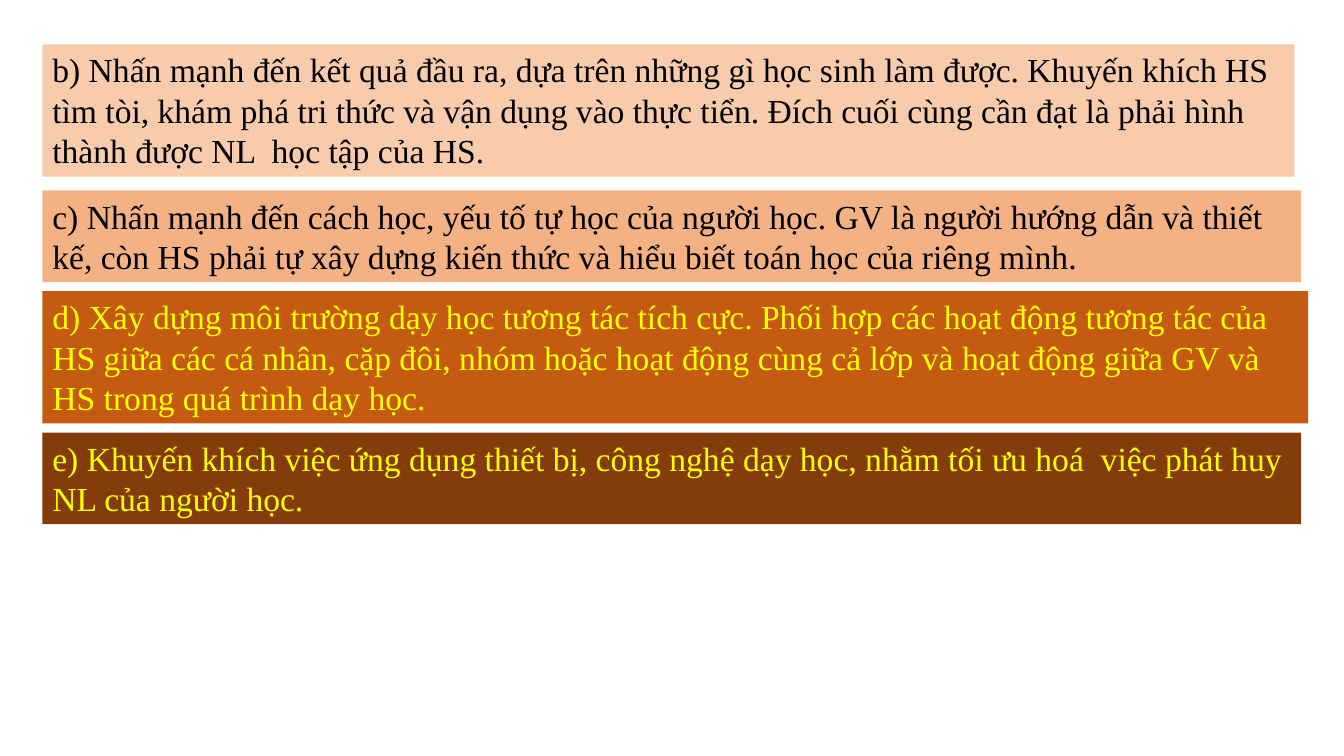
import pptx
import pptx.dml.color
import pptx.enum.text
import pptx.util

Cm = pptx.util.Cm
RGB = pptx.dml.color.RGBColor

PEACH = RGB(0xF8, 0xCB, 0xAD)
APRICOT = RGB(0xF4, 0xB1, 0x83)
RUST = RGB(0xC5, 0x5A, 0x11)
BROWN = RGB(0x84, 0x3C, 0x0B)
BLACK = RGB(0, 0, 0)
YELLOW = RGB(0xFF, 0xFF, 0)

LEFT = Cm(1.07)
TWO_LINES, THREE_LINES = Cm(2.31), Cm(3.33)

# top, width, height, fill, ink, text
POINTS = [
    (Cm(1.12), Cm(31.55), THREE_LINES, PEACH, BLACK,
     "b) Nhấn mạnh đến kết quả đầu ra, dựa trên những gì học sinh làm được. "
     "Khuyến khích HS tìm tòi, khám phá tri thức và vận dụng vào thực tiển. "
     "Đích cuối cùng cần đạt là phải hình thành được NL  học tập của HS."),
    (Cm(4.8), Cm(31.72), TWO_LINES, APRICOT, BLACK,
     "c) Nhấn mạnh đến cách học, yếu tố tự học của người học. "
     "GV là người hướng dẫn và thiết kế, còn HS phải tự xây dựng kiến thức "
     "và hiểu biết toán học của riêng mình."),
    (Cm(7.34), Cm(31.9), THREE_LINES, RUST, YELLOW,
     "d) Xây dựng môi trường dạy học tương tác tích cực. "
     "Phối hợp các hoạt động tương tác của HS giữa các cá nhân, cặp đôi, "
     "nhóm hoặc hoạt động cùng cả lớp và hoạt động giữa GV và HS "
     "trong quá trình dạy học."),
    (Cm(10.9), Cm(31.72), TWO_LINES, BROWN, YELLOW,
     "e) Khuyến khích việc ứng dụng thiết bị, công nghệ dạy học, "
     "nhằm tối ưu hoá  việc phát huy NL của người học."),
]


def add_point(slide, left, top, width, height, fill, ink, text):
    box = slide.shapes.add_textbox(left, top, width, height)
    box.fill.solid()
    box.fill.fore_color.rgb = fill
    frame = box.text_frame
    frame.word_wrap = True
    frame.auto_size = pptx.enum.text.MSO_AUTO_SIZE.SHAPE_TO_FIT_TEXT
    para = frame.paragraphs[0]
    para.text = text
    para.font.name = "Times New Roman"
    para.font.size = pptx.util.Pt(24)
    para.font.color.rgb = ink


def main():
    deck = pptx.Presentation()
    deck.slide_width, deck.slide_height = Cm(33.87), Cm(19.05)
    slide = deck.slides.add_slide(deck.slide_layouts[6])
    for point in POINTS:
        add_point(slide, LEFT, *point)
    deck.save("out.pptx")


if __name__ == "__main__":
    main()
